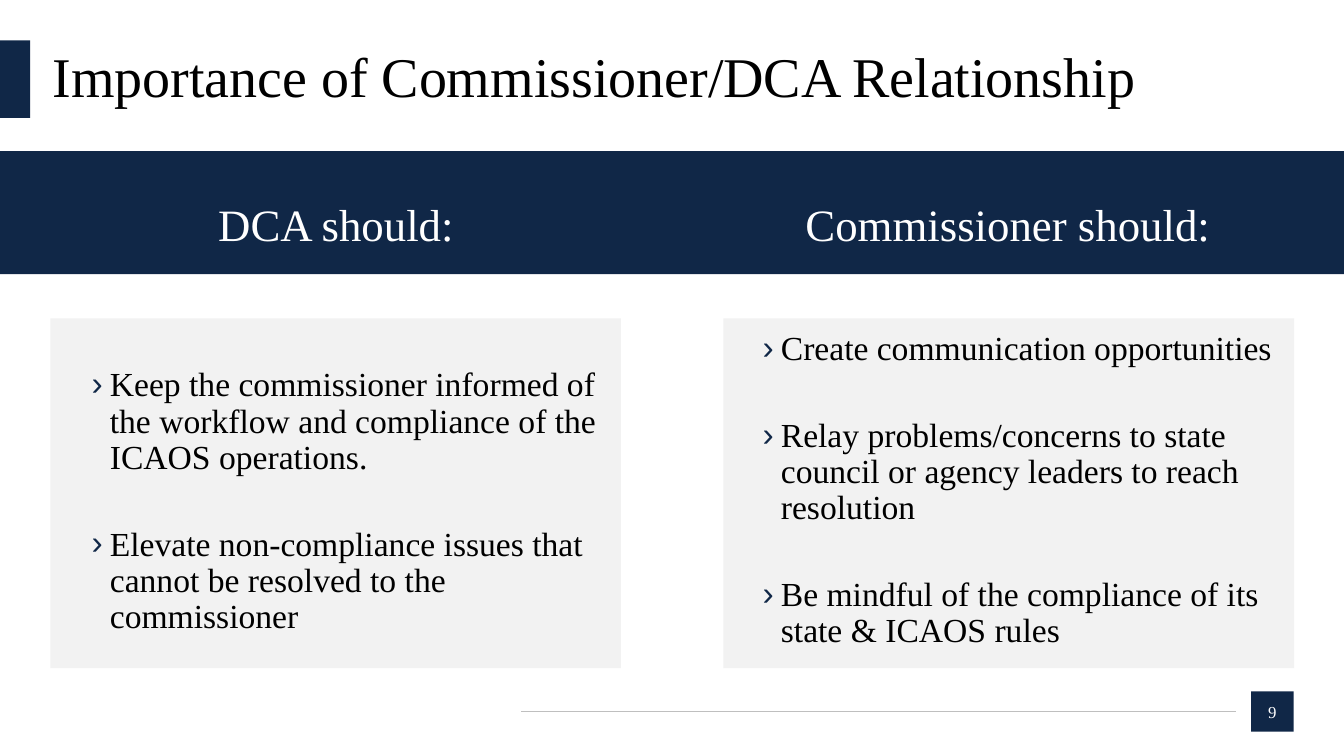
from lxml.etree import SubElement
from pptx import Presentation
from pptx.dml.color import RGBColor
from pptx.enum.shapes import MSO_CONNECTOR, MSO_SHAPE
from pptx.enum.text import MSO_ANCHOR, PP_ALIGN
from pptx.oxml.ns import qn
from pptx.util import Inches, Pt

TITLE = "Importance of Commissioner/DCA Relationship"
PAGE = "9"
COLUMNS = [
    ("DCA should:", 3.65, [
        "Keep the commissioner informed of the workflow and compliance of the ICAOS operations.",
        "Elevate non-compliance issues that cannot be resolved to the commissioner",
    ]),
    ("Commissioner should:", 3.29, [
        "Create communication opportunities",
        "Relay problems/concerns to state council or agency leaders to reach resolution",
        "Be mindful of the compliance of its state & ICAOS rules",
    ]),
]
COLORS = {"navy": "102747", "panel": "F2F2F2", "rule": "BFBFBF",
          "white": "FFFFFF", "black": "000000"}
FONT = "Times New Roman"
WIDTH, HEIGHT = 13.33, 7.5
MARGIN = 0.5
PANEL = 5.66
HEAD = 4.82
STEP = WIDTH / 2
PANEL_TOP, PANEL_TALL = 3.16, 3.47

deck = Presentation()
deck.slide_width, deck.slide_height = Inches(WIDTH), Inches(HEIGHT)
slide = deck.slides.add_slide(deck.slide_layouts[6])


def tint(name):
    return RGBColor.from_string(COLORS[name])


def block(left, top, width, height, color):
    shape = slide.shapes.add_shape(
        MSO_SHAPE.RECTANGLE, *map(Inches, (left, top, width, height)))
    shape.shadow.inherit = False
    shape.fill.solid()
    shape.fill.fore_color.rgb = tint(color)
    shape.line.fill.background()
    return shape


def style(para, size, color, align=PP_ALIGN.LEFT):
    para.alignment = align
    para.font.name = FONT
    para.font.size = Pt(size)
    para.font.color.rgb = tint(color)


def bullet(para):
    props = para._p.get_or_add_pPr()
    props.set("marL", str(Inches(0.57)))
    props.set("indent", str(Inches(-0.18)))
    color = SubElement(props, qn("a:buClr"))
    SubElement(color, qn("a:srgbClr"), val=COLORS["navy"])
    SubElement(props, qn("a:buFont"), typeface="Arial")
    SubElement(props, qn("a:buChar"), char="›")


def frame(left, top, width, height, anchor=MSO_ANCHOR.TOP):
    box = slide.shapes.add_textbox(*map(Inches, (left, top, width, height)))
    text = box.text_frame
    text.word_wrap = True
    text.vertical_anchor = anchor
    text.margin_left = text.margin_right = 0
    text.margin_top = text.margin_bottom = 0
    return text


block(0, 0.4, 0.3, 0.77, "navy")
title = frame(0.52, 0.4, 12.31, 0.77, MSO_ANCHOR.MIDDLE).paragraphs[0]
title.text = TITLE
title.line_spacing = 0.9
style(title, 40, "black")

block(0, 1.5, WIDTH, 1.22, "navy")
for col, (name, top, items) in enumerate(COLUMNS):
    left = MARGIN + col * (STEP + 0.01)
    block(left, PANEL_TOP, PANEL, PANEL_TALL, "panel")

    head = frame(STEP * (col + 0.5) - HEAD / 2, 1.95, HEAD, 0.54).paragraphs[0]
    head.text = name
    style(head, 32, "white", PP_ALIGN.CENTER)

    body = frame(left + 0.02 * (1 - col), top, 5.64, 6.48 - top)
    for row, item in enumerate(items):
        para = body.add_paragraph() if row else body.paragraphs[0]
        para.text = item
        para.line_spacing = 0.9
        para.space_before = Pt(36 if row else 0)
        bullet(para)
        style(para, 24, "black")

rule = slide.shapes.add_connector(
    MSO_CONNECTOR.STRAIGHT, *map(Inches, (5.17, 7.06, 12.26, 7.06)))
rule.line.color.rgb = tint("rule")
rule.line.width = Pt(0.5)
SubElement(rule._element.spPr, qn("a:effectLst"))

badge = block(12.41, 6.86, 0.42, 0.4, "navy").text_frame
badge.vertical_anchor = MSO_ANCHOR.MIDDLE
badge.paragraphs[0].text = PAGE
style(badge.paragraphs[0], 12, "white", PP_ALIGN.CENTER)

deck.save("out.pptx")
